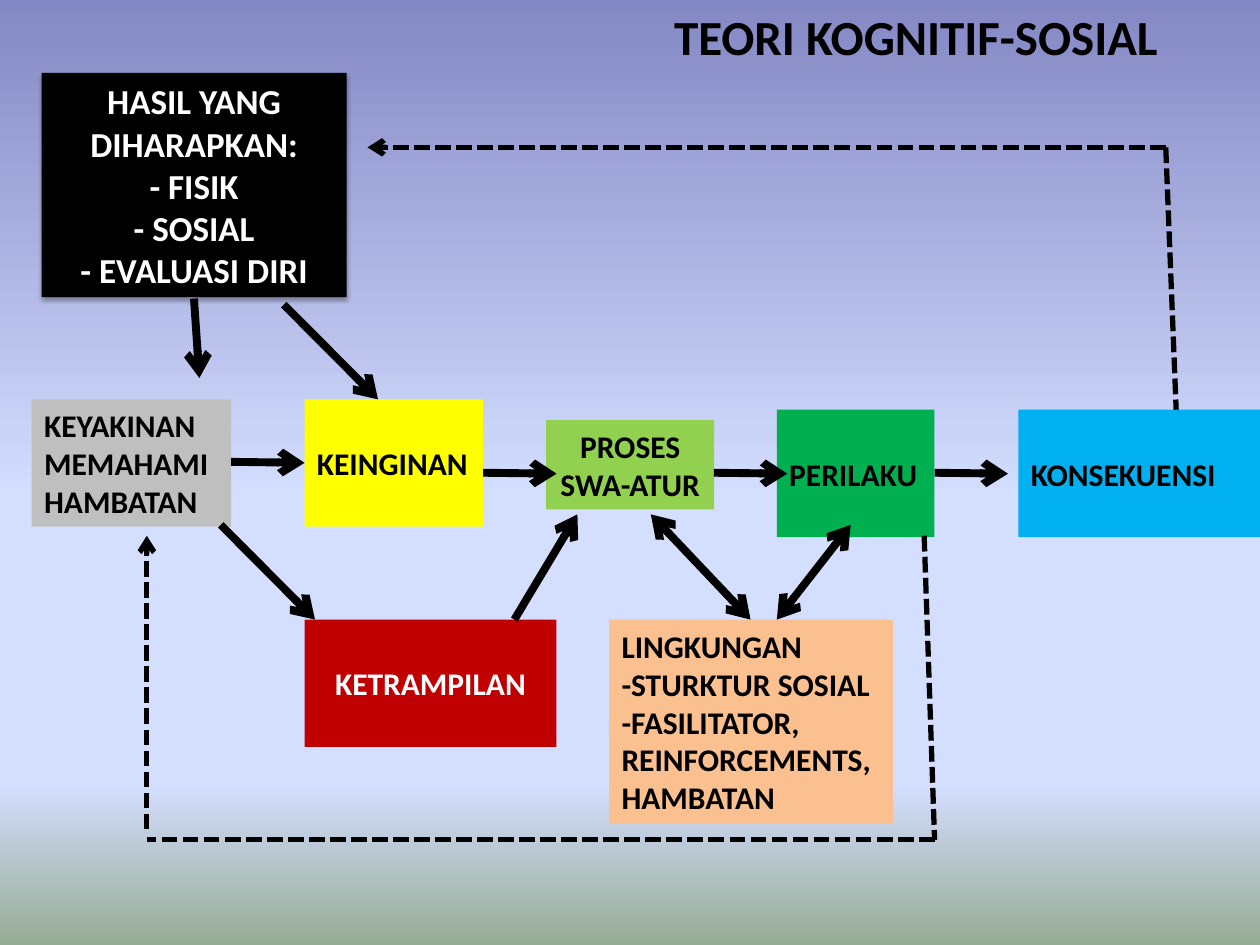
from dataclasses import dataclass, field
from typing import Any

from lxml import etree
from pptx import Presentation
from pptx import util as u
from pptx.dml.color import RGBColor
from pptx.enum import dml, shapes, text
from pptx.oxml.ns import qn


@dataclass(frozen=True)
class Theme:
    font: str = "Calibri"
    black: str = "000000"
    white: str = "FFFFFF"
    grey: str = "BFBFBF"
    yellow: str = "FFFF00"
    lime: str = "92D050"
    green: str = "00B050"
    blue: str = "00B0F0"
    red: str = "C00000"
    peach: str = "FAC090"
    title_size: int = 28
    outcome_size: int = 20
    body_size: int = 18
    solid_width: float = 4.5
    dashed_width: float = 3
    backdrop: dict[int, str] = field(default_factory=lambda: {
        0: "8488C4", 53: "D4DEFF", 83: "D4DEFF", 100: "96AB94"})


THEME = Theme()
PERCENT = 1000


@dataclass(frozen=True)
class Box:
    wording: str
    left: float
    top: float
    width: float
    height: float
    fill: str
    ink: str = THEME.black
    size: int = THEME.body_size
    centred: bool = False
    shadow: bool = False


@dataclass(frozen=True)
class Arrow:
    start: tuple[float, float]
    end: tuple[float, float]
    head: bool = False
    tail: bool = True
    dashed: bool = False


COLUMN = 6.14
UPPER, MIDDLE, LOWER = 8.05, 8.26, 12.49
BOX_HEIGHT = 2.57
FLOW = 9.53
LOOP_TOP, LOOP_BOTTOM = 2.97, 16.93

BOXES = [
    Box("HASIL YANG DIHARAPKAN:\n- FISIK\n- SOSIAL\n- EVALUASI DIRI",
        0.84, 1.47, 6.15, 4.52, THEME.black, THEME.white,
        THEME.outcome_size, centred=True, shadow=True),
    Box("KEYAKINAN\nMEMAHAMI HAMBATAN",
        0.64, UPPER, 4.02, BOX_HEIGHT, THEME.grey),
    Box("KEINGINAN", COLUMN, UPPER, 3.6, BOX_HEIGHT, THEME.yellow),
    Box("PROSES SWA-ATUR", 11.01, 8.47, 3.39, 1.8, THEME.lime, centred=True),
    Box("PERILAKU", 15.66, MIDDLE, 3.18, BOX_HEIGHT, THEME.green),
    Box("KONSEKUENSI", 20.53, MIDDLE, 4.87, BOX_HEIGHT, THEME.blue),
    Box("KETRAMPILAN", COLUMN, LOWER, 5.08, BOX_HEIGHT, THEME.red,
        THEME.white, centred=True),
    Box("LINGKUNGAN\n-STURKTUR SOSIAL\n-FASILITATOR, REINFORCEMENTS,\nHAMBATAN",
        2 * COLUMN, LOWER, 5.72, 4.11, THEME.peach),
]

ARROWS = [
    Arrow((3.91, 6.02), (4.02, 7.62)),
    Arrow((5.72, 6.14), (7.62, UPPER)),
    Arrow((4.66, 9.31), (COLUMN, 9.33)),
    *[Arrow((left, FLOW), (left + 1.48, FLOW + 0.02))
      for left in (9.74, 14.39, 18.84)],
    Arrow((4.45, 10.58), (6.35, LOWER)),
    Arrow((10.37, LOWER), (11.64, 10.37)),
    Arrow((15.13, LOWER), (13.12, 10.37), head=True),
    Arrow((15.66, LOWER), (17.15, 10.58), head=True),
    Arrow((18.63, 10.8), (18.84, LOOP_BOTTOM), tail=False, dashed=True),
    Arrow((18.84, LOOP_BOTTOM), (2.96, LOOP_BOTTOM), tail=False, dashed=True),
    Arrow((2.96, 16.72), (2.96, 10.8), dashed=True),
    Arrow((23.5, LOOP_TOP), (23.71, MIDDLE), tail=False, dashed=True),
    Arrow((23.5, LOOP_TOP), (7.41, LOOP_TOP), dashed=True),
]


def paint_background(page: Any) -> None:
    fill = page.background.fill
    fill.gradient()
    fill.gradient_angle = 270
    stops = next(page._element.iter(qn("a:gsLst")))
    for stop in list(stops):
        stops.remove(stop)
    for position, colour in THEME.backdrop.items():
        stop = etree.SubElement(stops, qn("a:gs"), pos=str(position * PERCENT))
        etree.SubElement(stop, qn("a:srgbClr"), val=colour)


def write(shape: Any, wording: str, size: int, ink: str, centred: bool) -> None:
    frame = shape.text_frame
    frame.word_wrap = True
    frame.text = wording
    for para in frame.paragraphs:
        para.alignment = text.PP_ALIGN.CENTER if centred else text.PP_ALIGN.LEFT
        for span in para.runs:
            span.font.name = THEME.font
            span.font.size = u.Pt(size)
            span.font.bold = True
            span.font.color.rgb = RGBColor.from_string(ink)


def add_shadow(shape: Any) -> None:
    effects = shape._element.spPr.find(qn("a:effectLst"))
    shadow = etree.SubElement(
        effects, qn("a:outerShdw"), blurRad=str(u.Pt(3.1)),
        dist=str(u.Pt(1.8)), dir="5400000", rotWithShape="0")
    colour = etree.SubElement(shadow, qn("a:srgbClr"), val=THEME.black)
    etree.SubElement(colour, qn("a:alpha"), val=str(35 * PERCENT))


def draw_box(page: Any, box: Box) -> None:
    shape = page.shapes.add_shape(
        shapes.MSO_SHAPE.RECTANGLE, u.Cm(box.left), u.Cm(box.top),
        u.Cm(box.width), u.Cm(box.height))
    shape.shadow.inherit = False
    shape.fill.solid()
    shape.fill.fore_color.rgb = RGBColor.from_string(box.fill)
    shape.line.fill.background()
    shape.text_frame.vertical_anchor = text.MSO_ANCHOR.MIDDLE
    write(shape, box.wording, box.size, box.ink, box.centred)
    if box.shadow:
        add_shadow(shape)


def draw_arrow(page: Any, arrow: Arrow) -> None:
    connector = page.shapes.add_connector(
        shapes.MSO_CONNECTOR.STRAIGHT,
        *(u.Cm(length) for length in arrow.start + arrow.end))
    line = connector.line
    line.color.rgb = RGBColor.from_string(THEME.black)
    line.width = u.Pt(THEME.dashed_width if arrow.dashed else THEME.solid_width)
    if arrow.dashed:
        line.dash_style = dml.MSO_LINE.SQUARE_DOT
    properties = connector._element.spPr
    outline = properties.find(qn("a:ln"))
    for tag, shown in (("a:headEnd", arrow.head), ("a:tailEnd", arrow.tail)):
        if shown:
            etree.SubElement(outline, qn(tag), type="arrow")
    etree.SubElement(properties, qn("a:effectLst"))


def draw_title(page: Any) -> None:
    title = page.shapes.add_textbox(u.Cm(13.34), u.Cm(0), u.Cm(11.23), u.Cm(1.45))
    write(title, "TEORI KOGNITIF-SOSIAL", THEME.title_size, THEME.black, False)


def main() -> None:
    deck = Presentation()
    deck.slide_width, deck.slide_height = u.Cm(25.4), u.Cm(19.05)
    page = deck.slides.add_slide(deck.slide_layouts[6])
    paint_background(page)
    for box in BOXES:
        draw_box(page, box)
    for arrow in ARROWS:
        draw_arrow(page, arrow)
    draw_title(page)
    deck.save("out.pptx")


if __name__ == "__main__":
    main()
